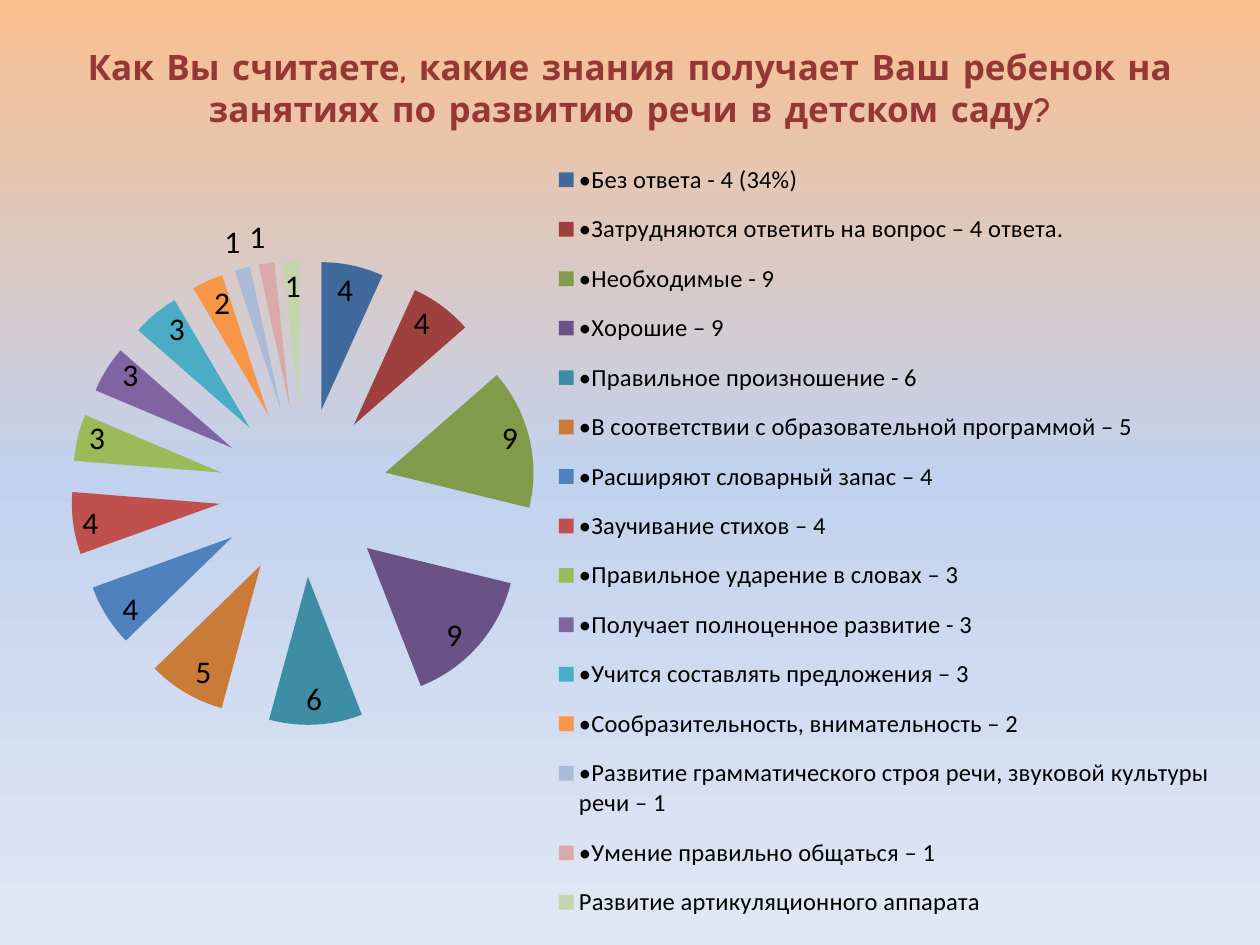
"""Build the survey slide: a title above an exploded pie with a long legend."""
from copy import deepcopy

from lxml.etree import SubElement
from pptx import Presentation
from pptx.chart.data import CategoryChartData
from pptx.dml.color import RGBColor
from pptx.enum.chart import XL_CHART_TYPE, XL_LABEL_POSITION, XL_LEGEND_POSITION
from pptx.enum.text import MSO_ANCHOR, PP_ALIGN
from pptx.oxml.ns import qn
from pptx.util import Cm, Pt

TITLE = "Как Вы считаете, какие знания получает Ваш ребенок на занятиях по развитию речи в детском саду?"
ANSWERS = [
    ("•Без ответа - 4 (34%)", 4, "406A9B"),
    ("•Затрудняются ответить на вопрос – 4 ответа.", 4, "9E413E"),
    ("•Необходимые - 9", 9, "809B4A"),
    ("•Хорошие – 9", 9, "6A5286"),
    ("•Правильное произношение - 6", 6, "3D8EA5"),
    ("•В соответствии с образовательной программой – 5", 5, "CB7B38"),
    ("•Расширяют словарный запас – 4", 4, "4F81BD"),
    ("•Заучивание стихов – 4", 4, "C0504D"),
    ("•Правильное ударение в словах – 3", 3, "9BBB59"),
    ("•Получает полноценное развитие - 3", 3, "8064A2"),
    ("•Учится составлять предложения – 3", 3, "4BACC6"),
    ("•Сообразительность, внимательность – 2", 2, "F79646"),
    ("•Развитие грамматического строя речи, звуковой культуры речи – 1", 1, "AABAD7"),
    ("•Умение правильно общаться – 1", 1, "D9AAA9"),
    ("Развитие артикуляционного аппарата", 1, "C6D6AC"),
]
THEME = {
    "stops": [(0, "FAC090"), (0.5, "C2D1ED"), (1, "E1E8F5")],
    "title": {"name": "Comic Neue", "size": Pt(20), "bold": True},
    "ink": "953735",
    "chart": {"name": "Calibri", "size": Pt(18)},
    "legend": {"name": "Calibri", "size": Pt(14)},
    "text": "000000",
}
BOXES = {
    "title": (Cm(1.27), Cm(0.76), Cm(22.86), Cm(2)),
    "chart": (Cm(1.2), Cm(2.77), Cm(23.42), Cm(16.28)),
}
PLOT = {"layoutTarget": "inner", "xMode": "edge", "yMode": "edge",
        "x": 0.01, "y": 0.14, "w": 0.4, "h": 0.6}
KEY = {"xMode": "edge", "yMode": "edge", "x": 0.42, "y": 0.01, "w": 0.58, "h": 0.98}
EXPLODE = 57


def apply(item, values):
    """Set each named value on the item."""
    for name, value in values.items():
        setattr(item, name, value)


def style(font, values, color):
    """Give a font its values and colour."""
    apply(font, values)
    font.color.rgb = RGBColor.from_string(color)


def place(shape, box):
    """Move and size a shape."""
    apply(shape, dict(zip(("left", "top", "width", "height"), box)))


def layout(parent, index, values):
    """Fix the place of a chart part."""
    for old in parent.findall(qn("c:layout")):
        parent.remove(old)
    node = parent.makeelement(qn("c:layout"))
    parent.insert(index, node)
    manual = SubElement(node, qn("c:manualLayout"))
    for name, value in values.items():
        SubElement(manual, qn(f"c:{name}"), val=str(value))


def paint(slide):
    """Fill the background with the theme gradient."""
    fill = slide.background.fill
    fill.gradient()
    fill.gradient_angle = 270
    stops = slide.element.find(".//" + qn("a:gsLst"))
    stops.append(deepcopy(stops[0]))
    for stop, (spot, color) in zip(fill.gradient_stops, THEME["stops"]):
        stop.position = spot
        stop.color.rgb = RGBColor.from_string(color)


def head(slide):
    """Write the title."""
    shape = slide.shapes.title
    place(shape, BOXES["title"])
    frame = shape.text_frame
    apply(frame, {"text": TITLE, "word_wrap": True, "vertical_anchor": MSO_ANCHOR.MIDDLE})
    para = frame.paragraphs[0]
    para.alignment = PP_ALIGN.CENTER
    style(para.runs[0].font, THEME["title"], THEME["ink"])


def pie(slide):
    """Draw the exploded pie and its legend."""
    names, counts, colors = zip(*ANSWERS)
    data = CategoryChartData()
    data.categories = names
    data.add_series("Series 1", counts)
    chart = slide.shapes.add_chart(XL_CHART_TYPE.PIE, *BOXES["chart"], data).chart
    apply(chart, {"has_title": False, "has_legend": True})
    style(chart.font, THEME["chart"], THEME["text"])
    apply(chart.legend, {"position": XL_LEGEND_POSITION.RIGHT, "include_in_layout": False})
    style(chart.legend.font, THEME["legend"], THEME["text"])

    plot = chart.plots[0]
    apply(plot, {"vary_by_categories": True, "has_data_labels": True})
    apply(plot.data_labels, {"show_value": True, "show_percentage": False,
                             "position": XL_LABEL_POSITION.BEST_FIT})
    style(plot.data_labels.font, THEME["chart"], THEME["text"])

    series = plot.series[0]
    for index, color in enumerate(colors):
        fill = series.points[index].format.fill
        fill.solid()
        fill.fore_color.rgb = RGBColor.from_string(color)

    root = chart.element
    text = root.find(".//" + qn("c:ser")).find(qn("c:tx"))
    text.addnext(text.makeelement(qn("c:explosion"), val=str(EXPLODE)))
    layout(root.find(".//" + qn("c:plotArea")), 0, PLOT)
    layout(root.find(".//" + qn("c:legend")), 1, KEY)


def main():
    """Make and save the slide."""
    deck = Presentation()
    apply(deck, {"slide_width": Cm(25.4), "slide_height": Cm(19.05)})
    slide = deck.slides.add_slide(deck.slide_layouts.get_by_name("Title Only"))
    paint(slide)
    head(slide)
    pie(slide)
    deck.save("out.pptx")


if __name__ == "__main__":
    main()
